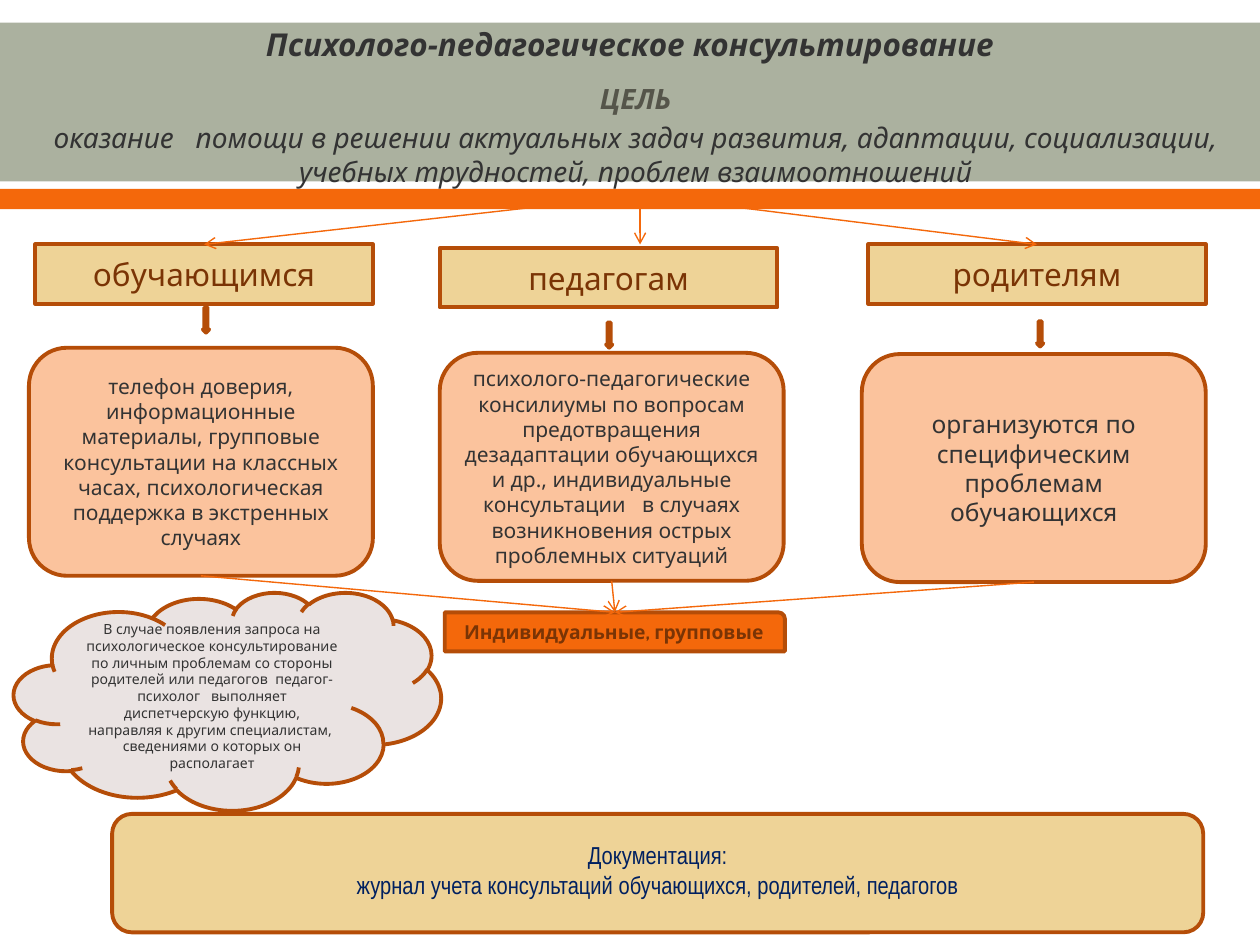
from dataclasses import dataclass

import pptx
import pptx.dml.color
import pptx.enum.shapes
import pptx.enum.text
import pptx.oxml
import pptx.oxml.ns
import pptx.util

RGB = pptx.dml.color.RGBColor
SHAPE = pptx.enum.shapes.MSO_SHAPE
ANCHOR = pptx.enum.text.MSO_ANCHOR
PX = 9144  # 100 px to the inch

SAGE = RGB(0xAB, 0xB1, 0x9F)
ORANGE = RGB(0xF4, 0x68, 0x0B)
RUST = RGB(0xB5, 0x4D, 0x08)
SAND = RGB(0xEE, 0xD3, 0x97)
PEACH = RGB(0xFB, 0xC3, 0x9D)
MIST = RGB(0xEA, 0xE3, 0xE2)
BROWN = RGB(0x7A, 0x34, 0x05)
DARK = RGB(0x33, 0x33, 0x33)
OLIVE = RGB(0x55, 0x55, 0x4A)
NAVY = RGB(0x00, 0x20, 0x60)


@dataclass(frozen=True)
class Box:
    left: int
    top: int
    width: int
    height: int

    def emu(self) -> list[int]:
        return [v * PX for v in (self.left, self.top, self.width, self.height)]


@dataclass(frozen=True)
class Style:
    size: int
    color: RGB
    font: str = "Noto Sans"
    bold: bool = False
    italic: bool = False


@dataclass(frozen=True)
class Audience:
    name: str
    head: Box
    arrow: Box
    body: Box
    text: str
    size: int


AUDIENCES = [
    Audience("обучающимся", Box(28, 194, 268, 47), Box(161, 244, 5, 20), Box(23, 276, 273, 181),
             "телефон доверия, информационные материалы, групповые консультации на классных "
             "часах, психологическая поддержка в экстренных случаях", 12),
    Audience("педагогам", Box(349, 197, 268, 47), Box(481, 256, 5, 20), Box(349, 280, 273, 181),
             "психолого-педагогические консилиумы по вопросам предотвращения дезадаптации "
             "обучающихся и др., индивидуальные консультации   в случаях возникновения "
             "острых проблемных ситуаций", 12),
    Audience("родителям", Box(689, 194, 268, 47), Box(823, 255, 5, 20), Box(684, 281, 273, 181),
             "организуются по специфическим проблемам обучающихся", 14),
]
GOAL = ("оказание   помощи в решении актуальных задач развития, адаптации, "
        "социализации, учебных трудностей, проблем взаимоотношений")
REQUEST = ("В случае появления запроса на психологическое консультирование по личным "
           "проблемам со стороны родителей или педагогов  педагог-психолог   выполняет "
           "диспетчерскую функцию, направляя к другим специалистам,  сведениями о "
           "которых он располагает")
HEAD_STYLE = Style(18, BROWN, "Cabin")
DOC_STYLE = Style(14, NAVY, "Arial Narrow")


def add_text(s, lines: list[tuple[str, Style]], anchor=ANCHOR.MIDDLE, gap: float = 0):
    tf = s.text_frame
    tf.word_wrap = True
    tf.vertical_anchor = anchor
    for i, (text, style) in enumerate(lines):
        p = tf.paragraphs[0] if i == 0 else tf.add_paragraph()
        p.alignment = pptx.enum.text.PP_ALIGN.CENTER
        if i and gap:
            p.space_before = pptx.util.Pt(gap)
        r = p.add_run()
        r.text = text
        r.font.size = pptx.util.Pt(style.size)
        r.font.name = style.font
        r.font.bold = style.bold
        r.font.italic = style.italic
        r.font.color.rgb = style.color
    return tf


def add_shape(slide, kind, box: Box, fill: RGB, outlined: bool = True):
    s = slide.shapes.add_shape(kind, *box.emu())
    s.shadow.inherit = False
    s.fill.solid()
    s.fill.fore_color.rgb = fill
    if outlined:
        s.line.color.rgb = RUST
        s.line.width = pptx.util.Pt(2.22)
    else:
        s.line.fill.background()
    return s


def add_arrow(slide, start: tuple[int, int], end: tuple[int, int]):
    c = slide.shapes.add_connector(pptx.enum.shapes.MSO_CONNECTOR.STRAIGHT,
                                   *(v * PX for v in start + end))
    c.line.color.rgb = ORANGE
    c.line.width = pptx.util.Pt(0.79)
    ln = c.line._get_or_add_ln()
    tail = pptx.oxml.parse_xml(f'<a:tailEnd {pptx.oxml.ns.nsdecls("a")} type="arrow"/>')
    ln.append(tail)
    c._element.spPr.append(
        pptx.oxml.parse_xml(f'<a:effectLst {pptx.oxml.ns.nsdecls("a")}/>'))
    return c


def add_header(slide):
    add_shape(slide, SHAPE.RECTANGLE, Box(0, 18, 1000, 126), SAGE, outlined=False)
    add_shape(slide, SHAPE.RECTANGLE, Box(0, 150, 1000, 16), ORANGE, outlined=False)
    title = slide.shapes.add_textbox(*Box(50, 20, 900, 64).emu())
    tf = add_text(title, [("Психолого-педагогическое консультирование",
                           Style(18, DARK, bold=True, italic=True))], ANCHOR.TOP)
    tf.margin_top = 0
    goal = slide.shapes.add_textbox(*Box(20, 60, 969, 661).emu())
    add_text(goal, [("ЦЕЛЬ", Style(16, OLIVE, "Cabin", bold=True, italic=True)),
                    (GOAL, Style(16, DARK, italic=True))], ANCHOR.TOP, gap=3.2)


def main():
    prs = pptx.Presentation()
    prs.slide_width, prs.slide_height = 1000 * PX, 750 * PX
    slide = prs.slides.add_slide(prs.slide_layouts[6])
    add_header(slide)

    heads, bodies = [], []
    for a in AUDIENCES:
        head = add_shape(slide, SHAPE.RECTANGLE, a.head, SAND)
        add_text(head, [(a.name, HEAD_STYLE)])
        heads.append(head)
        add_shape(slide, SHAPE.DOWN_ARROW, a.arrow, ORANGE)
        body = add_shape(slide, SHAPE.ROUNDED_RECTANGLE, a.body, PEACH)
        add_text(body, [(a.text, Style(a.size, DARK))])
        bodies.append(body)

    source = (508, 155)
    add_arrow(slide, source, (161, 194)).end_connect(heads[0], 0)
    add_arrow(slide, source, (508, 194))
    add_arrow(slide, source, (823, 194)).end_connect(heads[2], 0)

    forms = add_shape(slide, SHAPE.ROUND_1_RECTANGLE, Box(353, 486, 270, 31), ORANGE)
    add_text(forms, [("Индивидуальные, групповые", Style(11, BROWN, "Cabin", bold=True))])
    for body in bodies:
        c = add_arrow(slide, (488, 461), (488, 486))
        c.begin_connect(body, 2)
        c.end_connect(forms, 0)

    cloud = add_shape(slide, SHAPE.CLOUD, Box(11, 470, 339, 173), MIST)
    add_text(cloud, [(REQUEST, Style(8, DARK))])

    docs = add_shape(slide, SHAPE.ROUNDED_RECTANGLE, Box(89, 646, 866, 94), SAND)
    tf = add_text(docs, [("Документация:", DOC_STYLE),
                         ("журнал учета консультаций обучающихся, родителей, педагогов",
                          DOC_STYLE)])
    tf.margin_bottom = 10 * PX

    prs.save("out.pptx")


if __name__ == "__main__":
    main()
